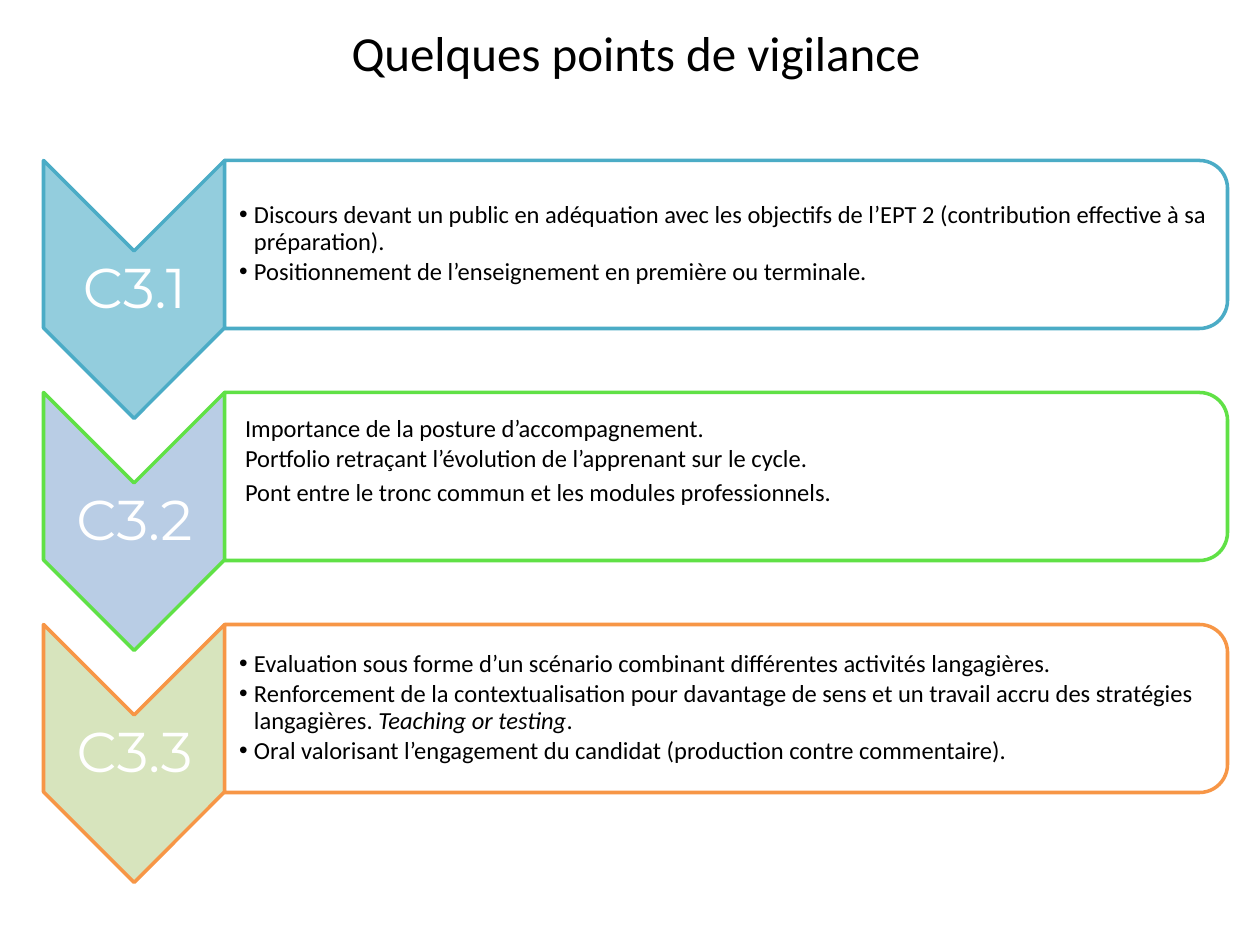
from dataclasses import dataclass

from pptx import Presentation
from pptx.dml.color import RGBColor
from pptx.enum.shapes import MSO_SHAPE as Preset
from pptx.enum.text import MSO_ANCHOR as Anchor, MSO_AUTO_SIZE as AutoSize, PP_ALIGN as Align
from pptx.oxml.ns import qn
from pptx.util import Emu, Pt
from lxml.etree import SubElement

BLACK = RGBColor(0x00, 0x00, 0x00)
WHITE = RGBColor(0xFF, 0xFF, 0xFF)
TEAL = RGBColor(0x4B, 0xAC, 0xC6)
LIGHT_TEAL = RGBColor(0x93, 0xCD, 0xDD)
GREEN = RGBColor(0x60, 0xE1, 0x46)
LIGHT_BLUE = RGBColor(0xB9, 0xCD, 0xE5)
ORANGE = RGBColor(0xF7, 0x96, 0x46)
LIGHT_OLIVE = RGBColor(0xD7, 0xE4, 0xBD)

# Layout, in px at 126 px to the inch
SLIDE_W, SLIDE_H = 1260, 945
FIRST_TOP, ROW_PITCH = 160, 232
CHEVRON_LEFT, CHEVRON_W, CHEVRON_H = 44, 181, 258
FRAME_LEFT, FRAME_W, FRAME_H = 225, 1003, 168
LABEL_OFFSET, LABEL_H = 91, 78
LIST_OFFSET, LIST_W, LIST_H = 8, 995, 152


@dataclass(frozen=True)
class Passage:
    text: str
    italic: bool = False


@dataclass(frozen=True)
class Skill:
    label: str
    fill: RGBColor
    border: RGBColor
    points: tuple[tuple[Passage, ...], ...]
    bulleted: bool = True
    bottom_inset: int = 1


SKILLS = (
    Skill("C3.1", LIGHT_TEAL, TEAL, (
        (Passage("Discours devant un public en adéquation avec les objectifs de l’EPT 2 "
                 "(contribution effective à sa préparation)."),),
        (Passage("Positionnement de l’enseignement en première ou terminale."),),
    )),
    Skill("C3.2", LIGHT_BLUE, GREEN, (
        (Passage("Importance de la posture d’accompagnement."),),
        (Passage("Portfolio retraçant l’évolution de l’apprenant sur le cycle."),),
        (Passage("Pont entre le tronc commun et les modules professionnels."),),
    ), bulleted=False, bottom_inset=30),
    Skill("C3.3", LIGHT_OLIVE, ORANGE, (
        (Passage("Evaluation sous forme d’un scénario combinant différentes activités langagières."),),
        (Passage("Renforcement de la contextualisation pour davantage de sens et un travail "
                 "accru des stratégies langagières. "),
         Passage("Teaching or testing", italic=True), Passage(".")),
        (Passage("Oral valorisant l’engagement du candidat (production contre commentaire)."),),
    )),
)


def px(length: int) -> Emu:
    return Emu(round(length * 914400 / 126))


def place(shape, left: int, top: int, width: int, height: int) -> None:
    shape.left, shape.top, shape.width, shape.height = map(px, (left, top, width, height))


def set_frame(text_frame, anchor, left: int, top: int, right: int, bottom: int) -> None:
    text_frame.word_wrap = True
    text_frame.auto_size = AutoSize.NONE
    text_frame.vertical_anchor = anchor
    text_frame.margin_left, text_frame.margin_top = px(left), px(top)
    text_frame.margin_right, text_frame.margin_bottom = px(right), px(bottom)


def set_font(paragraph, name: str, size: int, color: RGBColor) -> None:
    font = paragraph.font
    font.name, font.size, font.bold = name, Pt(size), False
    font.color.rgb = color


def add_turned(slide, preset, left: int, top: int, width: int, height: int,
               fill: RGBColor, border: RGBColor):
    """Add a preset turned a quarter right; the box given is the one it fills on the slide."""
    shift = (width - height) // 2
    shape = slide.shapes.add_shape(preset, px(left + shift), px(top - shift), px(height), px(width))
    shape.rotation = 90
    shape.shadow.inherit = False
    shape.fill.solid()
    shape.fill.fore_color.rgb = fill
    shape.line.color.rgb = border
    shape.line.width = Pt(2)
    return shape


def set_bullet(paragraph, bulleted: bool) -> None:
    properties = paragraph._p.get_or_add_pPr()
    indent = px(15) if bulleted else 0
    properties.set("marL", str(indent or px(6)))
    properties.set("indent", str(-indent))
    if bulleted:
        bullet_color = SubElement(properties, qn("a:buClr"))
        SubElement(bullet_color, qn("a:srgbClr"), val=str(BLACK))
        SubElement(properties, qn("a:buChar"), char="•")
    else:
        SubElement(properties, qn("a:buNone"))


def fill_list(body, skill: Skill) -> None:
    set_frame(body.text_frame, Anchor.MIDDLE, 14, 1, 1, skill.bottom_inset)
    for index, point in enumerate(skill.points):
        paragraph = body.text_frame.paragraphs[0] if index == 0 else body.text_frame.add_paragraph()
        paragraph.alignment = Align.LEFT
        paragraph.line_spacing = 1.0 if not skill.bulleted and index == 2 else 0.9
        paragraph.space_before, paragraph.space_after = Pt(0), Pt(2.2)
        set_bullet(paragraph, skill.bulleted)
        set_font(paragraph, "Calibri", 14, BLACK)
        for passage in point:
            run = paragraph.add_run()
            run.text = passage.text
            if passage.italic:
                run.font.italic = True


def draw_skill(slide, skill: Skill, body, top: int) -> None:
    # Chevron with its label
    add_turned(slide, Preset.CHEVRON, CHEVRON_LEFT, top, CHEVRON_W, CHEVRON_H,
               skill.fill, skill.border)
    label = slide.shapes.add_textbox(px(CHEVRON_LEFT), px(top + LABEL_OFFSET),
                                     px(CHEVRON_W), px(LABEL_H))
    set_frame(label.text_frame, Anchor.MIDDLE, 3, 3, 3, 3)
    paragraph = label.text_frame.paragraphs[0]
    paragraph.text = skill.label
    paragraph.alignment = Align.CENTER
    paragraph.line_spacing = 0.9
    set_font(paragraph, "Montserrat", 32, WHITE)

    # Slightly see-through frame
    frame = add_turned(slide, Preset.ROUND_2_SAME_RECTANGLE, FRAME_LEFT, top, FRAME_W, FRAME_H,
                       WHITE, skill.border)
    fill_color = next(frame.element.spPr.iter(qn("a:srgbClr")))
    SubElement(fill_color, qn("a:alpha"), val="90000")

    # List, brought in front of its frame
    place(body, FRAME_LEFT, top + LIST_OFFSET, LIST_W, LIST_H)
    fill_list(body, skill)
    slide.shapes.element.append(body.element)


def main() -> None:
    deck = Presentation()
    deck.slide_width, deck.slide_height = px(SLIDE_W), px(SLIDE_H)
    slide = deck.slides.add_slide(deck.slide_layouts.get_by_name("Comparison"))
    title, *bodies = slide.placeholders

    # Title
    place(title, 44, 16, 1184, 130)
    set_frame(title.text_frame, Anchor.TOP, 13, 6, 13, 6)
    heading = title.text_frame.paragraphs[0]
    heading.text = "Quelques points de vigilance"
    heading.alignment = Align.CENTER
    set_font(heading, "Calibri", 28, BLACK)

    # One row per skill
    for row, (skill, body) in enumerate(zip(SKILLS, bodies)):
        draw_skill(slide, skill, body, FIRST_TOP + row * ROW_PITCH)

    # Unused placeholders
    for spare in bodies[len(SKILLS):]:
        slide.shapes.element.remove(spare.element)

    deck.save("out.pptx")


if __name__ == "__main__":
    main()
